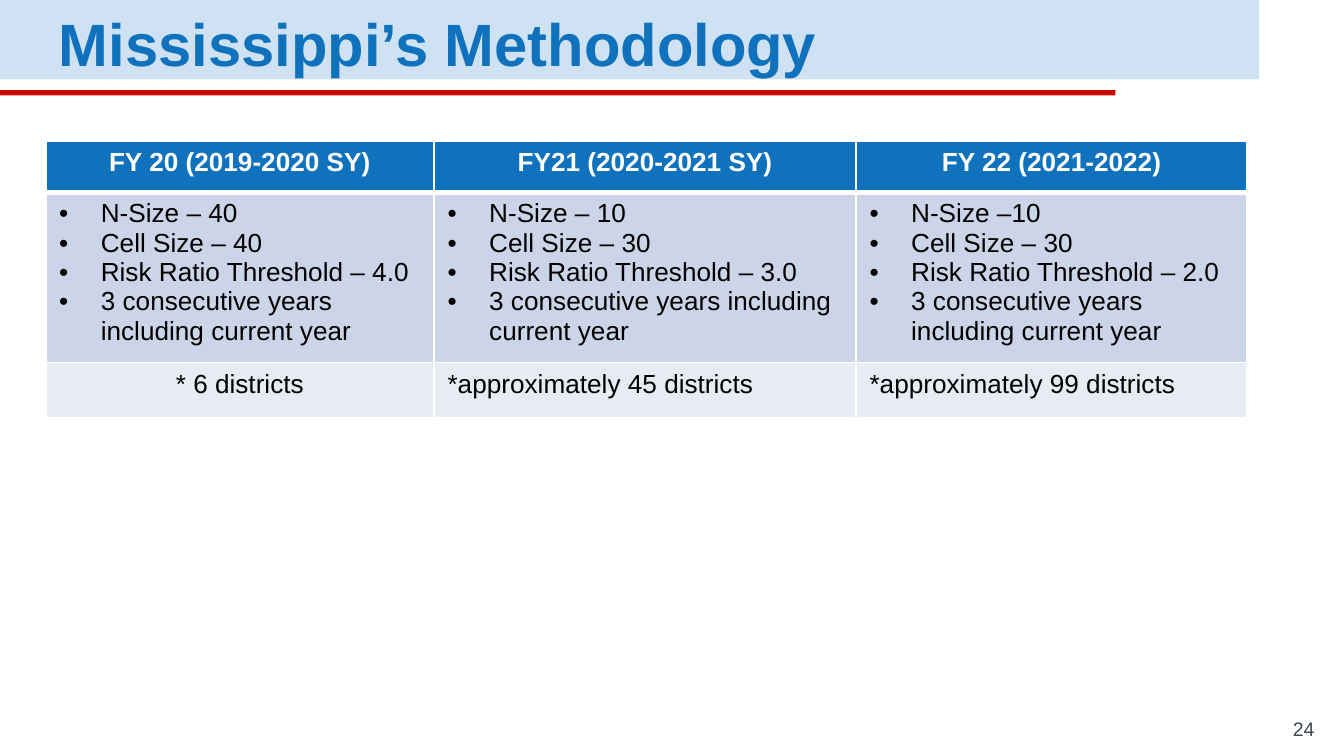
from lxml import etree
from pptx import Presentation
from pptx.dml.color import RGBColor
from pptx.enum import shapes, text
from pptx.oxml import ns
from pptx.util import Inches, Pt

COLORS = {
    "band": "CFE2F3", "rule": "CC0000", "blue": "1071BD", "slate": "3A4950",
    "white": "FFFFFF", "black": "000000", "body": "CCD5E8", "result": "E7EBF4",
}


def style(p, size, color, bold=False):
    for r in p.runs:
        r.font.name = "Arial"
        r.font.size = Pt(size)
        r.font.bold = bold
        r.font.color.rgb = RGBColor.from_string(COLORS[color])


def add_border(cell, side, width):
    line = etree.SubElement(cell._tc.get_or_add_tcPr(), ns.qn(f"a:ln{side}"), w=str(Pt(width)))
    fill = etree.SubElement(line, ns.qn("a:solidFill"))
    etree.SubElement(fill, ns.qn("a:srgbClr"), val=COLORS["white"])


prs = Presentation()
prs.slide_width, prs.slide_height = Inches(10), Inches(10 * 9 / 16)
s = prs.slides.add_slide(prs.slide_layouts[6])

for top, width, height, color in [(0, 9.37, 0.59, "band"), (0.67, 8.3, 0.04, "rule")]:
    bar = s.shapes.add_shape(shapes.MSO_SHAPE.RECTANGLE, 0, Inches(top), Inches(width), Inches(height))
    bar.shadow.inherit = False
    bar.fill.solid()
    bar.fill.fore_color.rgb = RGBColor.from_string(COLORS[color])
    bar.line.fill.background()

labels = [
    ("Mississippi’s Methodology", (0.34, 0.03, 9.03, 0.49), 32, "blue", True,
     text.MSO_ANCHOR.MIDDLE, text.PP_ALIGN.LEFT),
    ("24", (9.28, 5.34, 0.6, 0.26), 10.5, "slate", False,
     text.MSO_ANCHOR.BOTTOM, text.PP_ALIGN.RIGHT),
]
for words, box, size, color, bold, anchor, align in labels:
    tf = s.shapes.add_textbox(*map(Inches, box)).text_frame
    tf.word_wrap = True
    tf.vertical_anchor = anchor
    tf.margin_left = tf.margin_right = tf.margin_top = tf.margin_bottom = Inches(0.1)
    p = tf.paragraphs[0]
    p.text = words
    p.alignment = align
    if bold:
        p.line_spacing = 1.15
        p.space_after = Pt(16)
    style(p, size, color, bold)

period = "3 consecutive years including current year"
rows = [
    ["FY 20 (2019-2020 SY)", "FY21 (2020-2021 SY)", "FY 22 (2021-2022)"],
    [
        f"N-Size – 40\nCell Size – 40\nRisk Ratio Threshold – 4.0\n{period}",
        f"N-Size – 10\nCell Size – 30\nRisk Ratio Threshold – 3.0\n{period}",
        f"N-Size –10\nCell Size – 30\nRisk Ratio Threshold – 2.0\n{period}",
    ],
    ["* 6 districts", "*approximately 45 districts", "*approximately 99 districts"],
]
widths = [2.89, 3.14, 2.91]
heights = [0.38, 0.41, 0.41]
fills = ["blue", "body", "result"]

frame = s.shapes.add_table(
    3, 3, Inches(0.34), Inches(1.05), Inches(sum(widths)), Inches(sum(heights)))
table = frame.table
for column, width in zip(table.columns, widths):
    column.width = Inches(width)
for i, row in enumerate(rows):
    table.rows[i].height = Inches(heights[i])
    for j, words in enumerate(row):
        cell = table.cell(i, j)
        for side in "LRTB":
            heavy = (i, side) in [(0, "B"), (1, "T")]
            add_border(cell, side, 3 if heavy else 1)
        cell.fill.solid()
        cell.fill.fore_color.rgb = RGBColor.from_string(COLORS[fills[i]])
        cell.text_frame.text = words
        for p in cell.text_frame.paragraphs:
            if i == 1:
                pPr = p._p.get_or_add_pPr()
                pPr.set("marL", str(Inches(0.31)))
                pPr.set("indent", str(Inches(-0.31)))
                etree.SubElement(pPr, ns.qn("a:buFont"), typeface="Arial")
                etree.SubElement(pPr, ns.qn("a:buChar"), char="•")
            elif i == 0 or j == 0:
                p.alignment = text.PP_ALIGN.CENTER
            style(p, 14, "white" if i == 0 else "black", i == 0)
frame.height = Inches(2.06)

prs.save("out.pptx")
